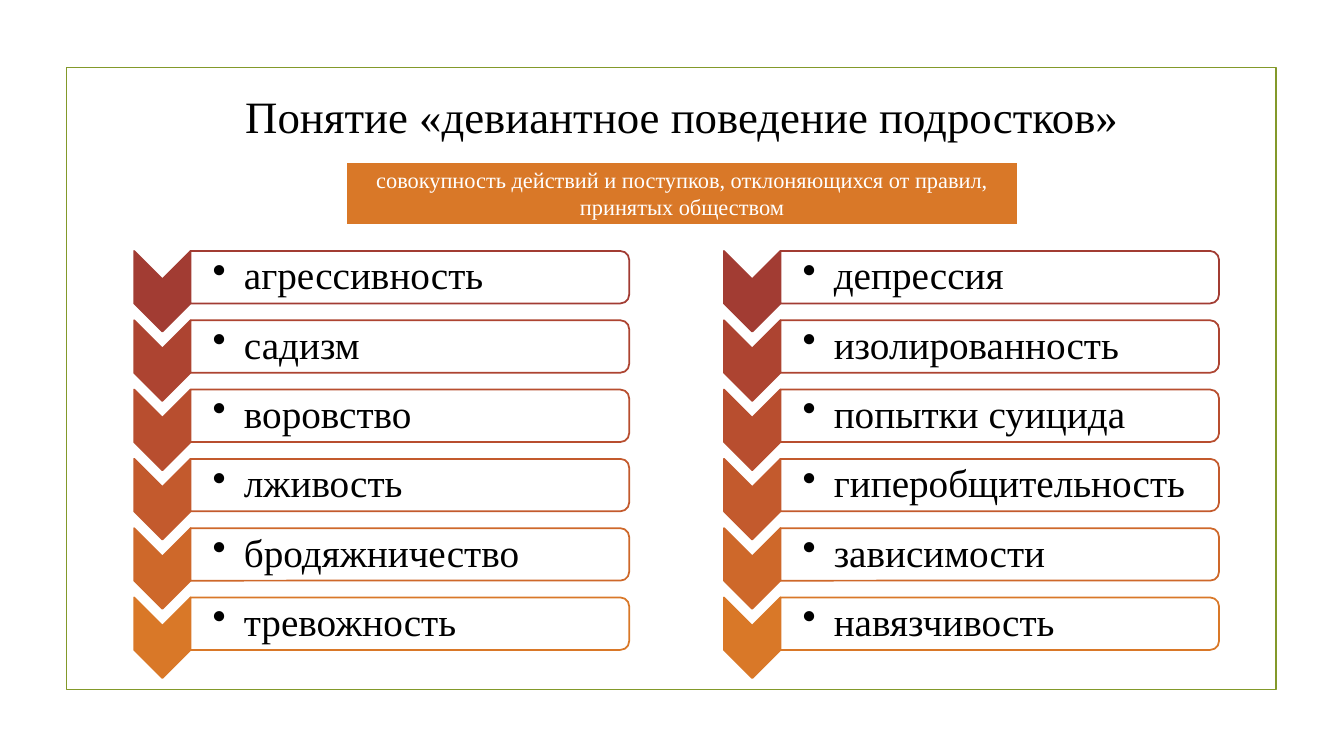
import pptx
import pptx.util
import pptx.dml.color
import pptx.enum.shapes
import pptx.enum.text
from lxml import etree

RGB = pptx.dml.color.RGBColor
SHAPE = pptx.enum.shapes.MSO_SHAPE
ANCHOR = pptx.enum.text.MSO_ANCHOR
ALIGN = pptx.enum.text.PP_ALIGN
Inches, Pt = pptx.util.Inches, pptx.util.Pt

TITLE = "Понятие «девиантное поведение подростков»"
DEFINITION = "совокупность действий и поступков, отклоняющихся от правил, принятых обществом"
COLUMNS = [
    ["агрессивность", "садизм", "воровство", "лживость", "бродяжничество", "тревожность"],
    ["депрессия", "изолированность", "попытки суицида", "гиперобщительность",
     "зависимости", "навязчивость"],
]

BLACK = RGB(0x00, 0x00, 0x00)
WHITE = RGB(0xFF, 0xFF, 0xFF)
OLIVE = RGB(0x83, 0x99, 0x2A)
ORANGE = RGB(0xD9, 0x78, 0x28)
ROW_COLORS = [RGB(0xA2, 0x3C, 0x33), RGB(0xAD, 0x44, 0x31), RGB(0xB8, 0x4E, 0x2F),
              RGB(0xC3, 0x5A, 0x2D), RGB(0xCE, 0x68, 0x2A), ORANGE]

# Grid, in inches
LEFT, COLUMN_STEP = 1.33, 5.85
TOP, ROW_STEP = 2.49, 0.6875
CHEVRON_W, CHEVRON_H = 0.56, 0.8
PANEL_W, PANEL_H = 4.35, 0.52
LABEL_W, LABEL_H = 4.33, 0.47

TITLE_FONT = dict(size=Pt(32), name="Times New Roman")
DEFINITION_FONT = dict(size=Pt(16), name="Times New Roman")
LABEL_FONT = dict(size=Pt(28), name="Times New Roman")
LABEL_MARGINS = dict(margin_left=Inches(0.22), margin_top=Inches(0.02),
                     margin_right=Inches(0.02), margin_bottom=Inches(0.02))


def add_shape(s, kind, box, fill, line, width=1.25):
    sp = s.shapes.add_shape(kind, *map(Inches, box))
    sp.shadow.inherit = False
    if fill is None:
        sp.fill.background()
    else:
        sp.fill.solid()
        sp.fill.fore_color.rgb = fill
    sp.line.color.rgb = line
    sp.line.width = Pt(width)
    return sp


def add_turned(s, kind, box, fill, line):
    """Add a shape turned by 90 degrees that covers the given box once turned."""
    x, y, w, h = box
    sp = add_shape(s, kind, (x + (w - h) / 2, y + (h - w) / 2, h, w), fill, line)
    sp.rotation = 90


def write(sp, text, font, color, anchor, align, margins={}):
    tf = sp.text_frame
    for key, value in dict(word_wrap=True, vertical_anchor=anchor, **margins).items():
        setattr(tf, key, value)
    p = tf.paragraphs[0]
    p.alignment = align
    r = p.add_run()
    r.text = text
    for key, value in font.items():
        setattr(r.font, key, value)
    r.font.color.rgb = color
    return p


def add_bullet(p, indent):
    pPr = p._p.get_or_add_pPr()
    pPr.set("marL", str(Inches(indent)))
    pPr.set("indent", str(-Inches(indent)))
    bullet = etree.SubElement(pPr, pptx.oxml.ns.qn("a:buChar"))
    bullet.set("char", "•")


def add_item(s, x, y, text, color):
    panel_x = x + CHEVRON_W
    add_turned(s, SHAPE.CHEVRON, (x, y, CHEVRON_W, CHEVRON_H), color, color)
    add_turned(s, SHAPE.ROUND_2_SAME_RECTANGLE, (panel_x, y, PANEL_W, PANEL_H), WHITE, color)
    label_y = y + (PANEL_H - LABEL_H) / 2
    label = s.shapes.add_textbox(*map(Inches, (panel_x, label_y, LABEL_W, LABEL_H)))
    p = write(label, text, LABEL_FONT, BLACK, ANCHOR.MIDDLE, ALIGN.LEFT, LABEL_MARGINS)
    add_bullet(p, 0.31)
    p.level = 1
    p.line_spacing = 0.9


def main():
    prs = pptx.Presentation()
    prs.slide_width, prs.slide_height = Inches(13.33), Inches(7.5)
    s = prs.slides.add_slide(prs.slide_layouts[6])

    add_shape(s, SHAPE.RECTANGLE, (0.66, 0.67, 12, 6.17), None, OLIVE)
    title = s.shapes.add_textbox(*map(Inches, (2.32, 0.84, 8.89, 0.61)))
    write(title, TITLE, TITLE_FONT, BLACK, ANCHOR.MIDDLE, ALIGN.CENTER)
    definition = add_shape(s, SHAPE.RECTANGLE, (3.43, 1.6, 6.67, 0.64), ORANGE, WHITE, 2)
    write(definition, DEFINITION, DEFINITION_FONT, WHITE, ANCHOR.TOP, ALIGN.CENTER)

    for col, items in enumerate(COLUMNS):
        for row, (text, color) in enumerate(zip(items, ROW_COLORS)):
            add_item(s, LEFT + col * COLUMN_STEP, TOP + row * ROW_STEP, text, color)

    prs.save("out.pptx")


if __name__ == "__main__":
    main()
